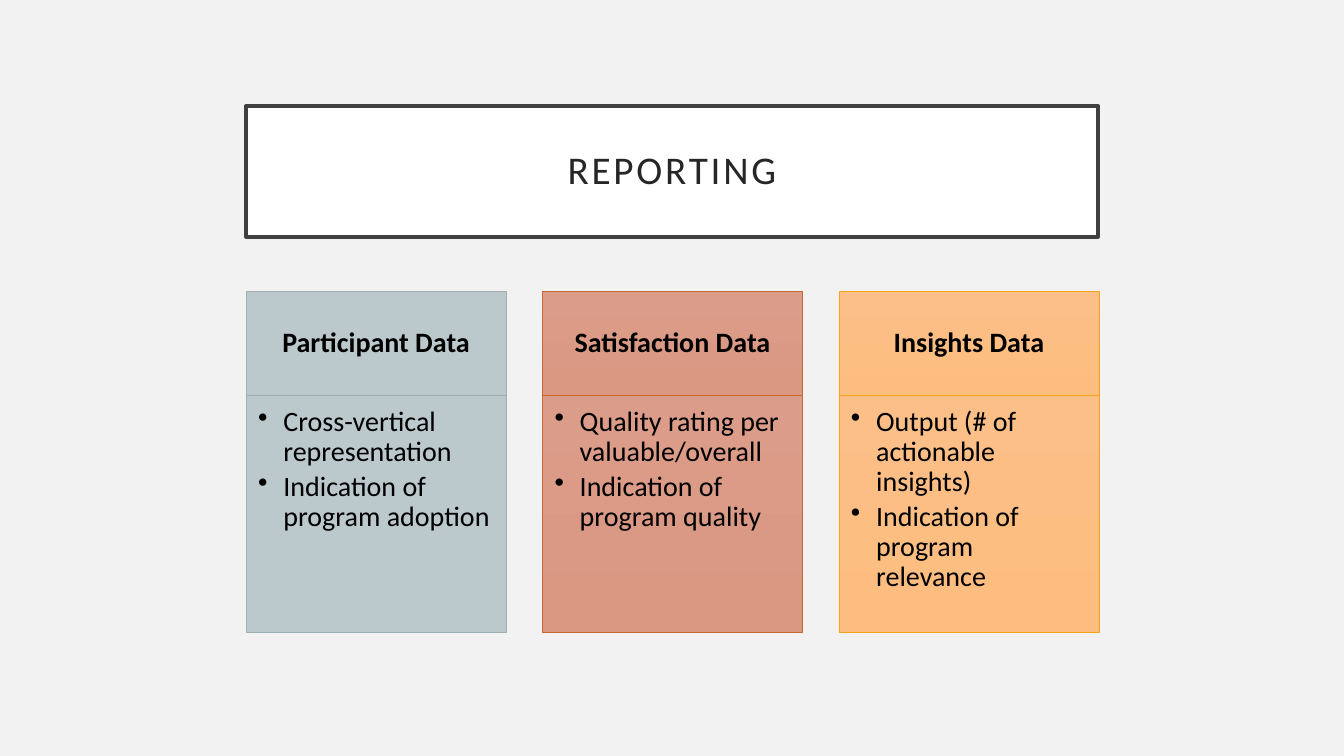
from dataclasses import dataclass

from lxml import etree
from pptx import Presentation
from pptx import util as u
from pptx.dml.color import RGBColor
from pptx.enum import shapes, text
from pptx.oxml.ns import qn


@dataclass(frozen=True)
class Theme:
    face: str = "Calibri"
    back: str = "F2F2F2"
    paper: str = "FFFFFF"
    frame: str = "404040"
    head: str = "262626"
    ink: str = "000000"
    big: int = 28
    body: int = 20
    thick: float = 2.5
    thin: float = 0.5


THEME = Theme()

# Lengths in inches
WIDE, HIGH = 13.33, 7.5
LEFT, SPAN = 2.44, 8.45
COL, STEP = 2.58, 2.94
TOP, HEAD, BODY = 2.89, 1.03, 2.35

# Heading, points, gradient start, gradient end, outline
CARDS = [
    ("Participant Data",
     ["Cross-vertical representation", "Indication of program adoption"],
     "BBC8CC", "B8C6CB", "9BAFB5"),
    ("Satisfaction Data",
     ["Quality rating per valuable/overall", "Indication of program quality"],
     "DB9C89", "DA9882", "C96731"),
    ("Insights Data",
     ["Output (# of actionable insights)", "Indication of program relevance"],
     "FCBF87", "FDBD80", "F6A21D"),
]


def rgb(code):
    return RGBColor.from_string(code)


def place(shape, x, y, w, h):
    shape.left, shape.top = u.Inches(x), u.Inches(y)
    shape.width, shape.height = u.Inches(w), u.Inches(h)


def edge(shape, color, width):
    shape.line.color.rgb = rgb(color)
    shape.line.width = u.Pt(width)


def frame(shape, pads, anchor):
    """Set wrapping, anchor and insets (left, top, right, bottom)."""
    box = shape.text_frame
    box.word_wrap = True
    box.auto_size = text.MSO_AUTO_SIZE.NONE
    box.vertical_anchor = anchor
    (box.margin_left, box.margin_top,
     box.margin_right, box.margin_bottom) = map(u.Inches, pads)
    return box


def style(para, size, color, align, bold=False):
    para.alignment = align
    para.line_spacing = 0.9
    font = para.font
    font.name, font.size, font.bold = THEME.face, u.Pt(size), bold
    font.color.rgb = rgb(color)


def bullet(para):
    props = para._p.get_or_add_pPr()
    props.set("marL", str(u.Inches(0.25)))
    props.set("indent", str(-u.Inches(0.25)))
    etree.SubElement(props, qn("a:buChar")).set("char", "•")


def title(slide):
    shape = slide.shapes.title
    place(shape, LEFT, 1.05, SPAN, 1.3)
    shape.fill.solid()
    shape.fill.fore_color.rgb = rgb(THEME.paper)
    edge(shape, THEME.frame, THEME.thick)
    box = frame(shape, [0.2] * 4, text.MSO_ANCHOR.MIDDLE)
    box.text = "REPORTING"
    para = box.paragraphs[0]
    style(para, THEME.big, THEME.head, text.PP_ALIGN.CENTER)
    para.runs[0]._r.get_or_add_rPr().set("spc", "200")


def panel(slide, x, y, h, tones, line):
    shape = slide.shapes.add_shape(
        shapes.MSO_SHAPE.RECTANGLE, 0, 0, 0, 0)
    place(shape, x, y, COL, h)
    shape.shadow.inherit = False
    shape.fill.gradient()
    shape.fill.gradient_angle = 270
    for stop, tone in zip(shape.fill.gradient_stops, tones):
        stop.color.rgb = rgb(tone)
    edge(shape, line, THEME.thin)
    return shape


def card(slide, x, name, points, tones, line):
    top = panel(slide, x, TOP, HEAD, tones, line)
    box = frame(top, [0.16, 0.09, 0.16, 0.09], text.MSO_ANCHOR.MIDDLE)
    box.text = name
    style(box.paragraphs[0], THEME.body, THEME.ink,
          text.PP_ALIGN.CENTER, bold=True)

    low = panel(slide, x, TOP + HEAD, BODY, tones, line)
    box = frame(low, [0.12, 0.12, 0.16, 0.17], text.MSO_ANCHOR.TOP)
    box.text = "\n".join(points)
    for para in box.paragraphs:
        bullet(para)
        style(para, THEME.body, THEME.ink, text.PP_ALIGN.LEFT)
        para.space_after = u.Pt(3)


def main():
    deck = Presentation()
    deck.slide_width, deck.slide_height = u.Inches(WIDE), u.Inches(HIGH)
    slide = deck.slides.add_slide(deck.slide_layouts[5])
    slide.background.fill.solid()
    slide.background.fill.fore_color.rgb = rgb(THEME.back)
    title(slide)
    for i, (name, points, start, end, line) in enumerate(CARDS):
        card(slide, LEFT + i * STEP, name, points, (start, end), line)
    deck.save("out.pptx")


if __name__ == "__main__":
    main()
